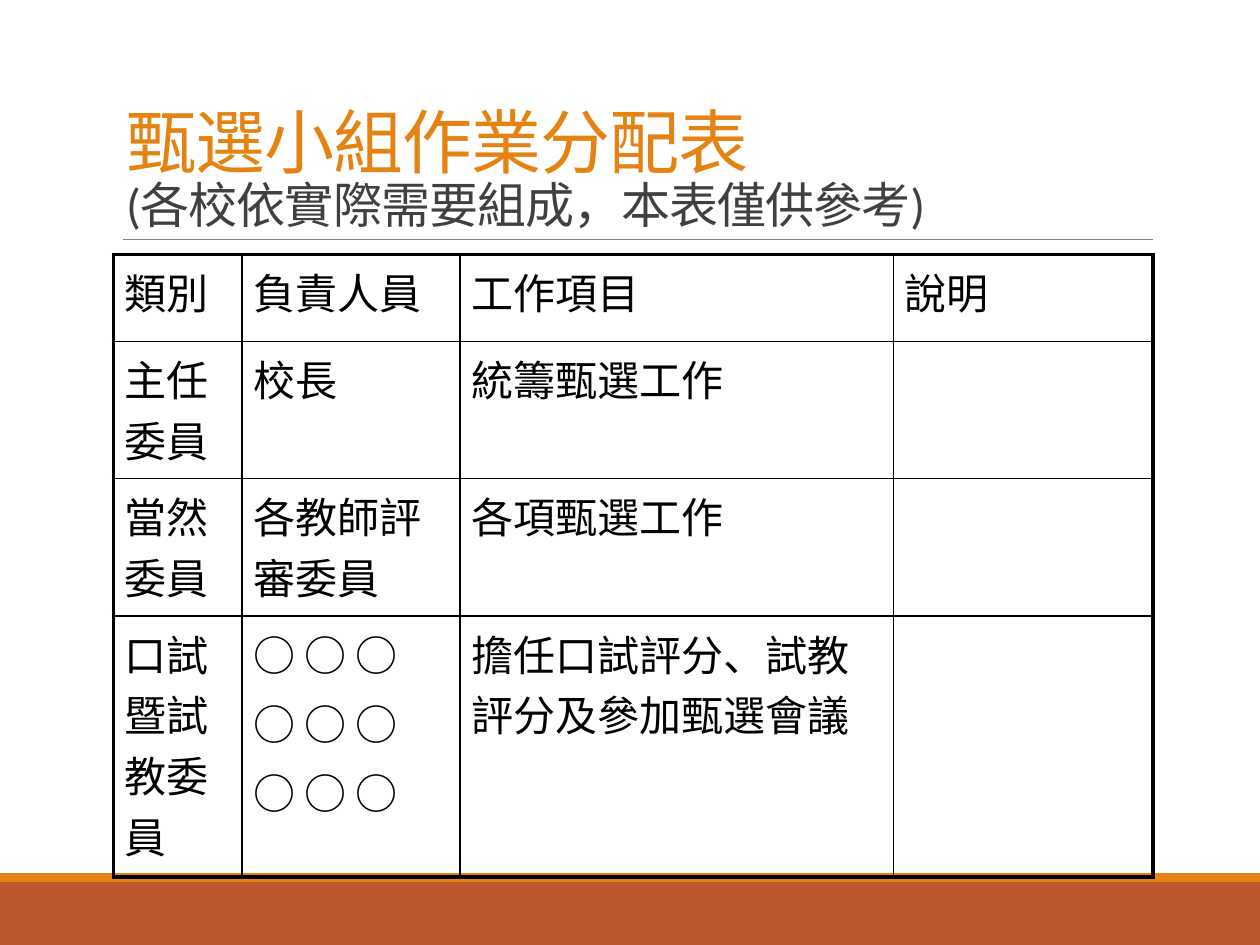
from lxml import etree
from pptx import Presentation
from pptx.dml.color import RGBColor
from pptx.enum.shapes import MSO_CONNECTOR, MSO_SHAPE
from pptx.enum.text import MSO_ANCHOR, MSO_AUTO_SIZE, PP_ALIGN
from pptx.oxml.ns import qn
from pptx.util import Inches, Pt

RECT = MSO_SHAPE.RECTANGLE
LINE = MSO_CONNECTOR.STRAIGHT
BOTTOM = MSO_ANCHOR.BOTTOM
FIXED = MSO_AUTO_SIZE.NONE
LEFT = PP_ALIGN.LEFT
CJK = "Noto Sans CJK SC"

COLS = [1.02, 1.73, 3.44, 2.06]
HEIGHTS = [0.69, 1.09, 1.09, 2.07]
ROWS = [
    ["類別", "負責人員", "工作項目", "說明"],
    ["主任委員", "校長", "統籌甄選工作", ""],
    ["當然委員", "各教師評審委員", "各項甄選工作", ""],
    ["口試暨試教委員", "\n".join(["○ ○ ○"] * 3),
     "擔任口試評分、試教評分及參加甄選會議", ""],
]


def color(code):
    return RGBColor.from_string(code)


def style(run, size, code, face):
    run.font.size = Pt(size)
    run.font.color.rgb = color(code)
    run.font.name = face
    props = run._r.get_or_add_rPr()
    etree.SubElement(props, qn("a:ea")).set("typeface", CJK)
    return props


def add_bar(slide, left, top, width, height, code):
    bar = slide.shapes.add_shape(
        RECT, Inches(left), Inches(top), Inches(width), Inches(height))
    bar.shadow.inherit = False
    bar.fill.solid()
    bar.fill.fore_color.rgb = color(code)
    bar.line.fill.background()


def add_rule(slide, left, top, width):
    rule = slide.shapes.add_connector(
        LINE, Inches(left), Inches(top), Inches(left + width), Inches(top))
    rule.line.color.rgb = color("808080")
    rule.line.width = Pt(0.5)
    etree.SubElement(rule._element.spPr, qn("a:effectLst"))


def set_title(slide, left, top, width, height):
    title = slide.shapes.title
    title.left, title.top = Inches(left), Inches(top)
    title.width, title.height = Inches(width), Inches(height)
    frame = title.text_frame
    frame.word_wrap = True
    frame.auto_size = FIXED
    frame.vertical_anchor = BOTTOM
    para = frame.paragraphs[0]
    para.text = "甄選小組作業分配表\v(各校依實際需要組成，本表僅供參考)"
    para.alignment = LEFT
    para.line_spacing = 0.85
    for run, size, code in zip(para.runs, (40, 28), ("E48312", "404040")):
        style(run, size, code, "Calibri").set("spc", "-50")


def set_edges(cell, outer):
    props = cell._tc.get_or_add_tcPr()
    for spot, (side, thick) in enumerate(zip("LRTB", outer)):
        edge = etree.Element(qn("a:ln" + side))
        edge.set("w", str(Pt(2.25 if thick else 1)))
        fill = etree.SubElement(edge, qn("a:solidFill"))
        etree.SubElement(fill, qn("a:srgbClr")).set("val", "000000")
        props.insert(spot, edge)


def fill_cell(cell, text):
    cell.fill.background()
    cell.margin_left = cell.margin_right = Inches(0.09)
    cell.margin_top = cell.margin_bottom = Inches(0.05)
    cell.text_frame.text = text
    for para in cell.text_frame.paragraphs:
        para.space_before = Pt(4.8)
        for run in para.runs:
            style(run, 24, "000000", CJK)


def add_grid(slide, left, top, width, height):
    grid = slide.shapes.add_table(
        len(ROWS), len(COLS), Inches(left), Inches(top),
        Inches(width), Inches(height)).table
    grid.first_row = grid.horz_banding = False
    for col, size in zip(grid.columns, COLS):
        col.width = Inches(size)
    for row, size in zip(grid.rows, HEIGHTS):
        row.height = Inches(size)
    for r, texts in enumerate(ROWS):
        for c, text in enumerate(texts):
            cell = grid.cell(r, c)
            fill_cell(cell, text)
            set_edges(cell, (c == 0, c == len(COLS) - 1,
                             r == 0, r == len(ROWS) - 1))


def main():
    deck = Presentation()
    deck.slide_width, deck.slide_height = Inches(10), Inches(7.5)
    slide = deck.slides.add_slide(deck.slide_layouts[5])
    add_bar(slide, 0, 7, 10, 0.5, "BD582C")
    add_bar(slide, 0, 6.93, 10, 0.07, "E48312")
    add_rule(slide, 0.98, 1.9, 8.17)
    set_title(slide, 0.9, 0.31, 8.25, 1.59)
    add_grid(slide, 0.9, 2.02, 8.25, 4.95)
    deck.save("out.pptx")


if __name__ == "__main__":
    main()
